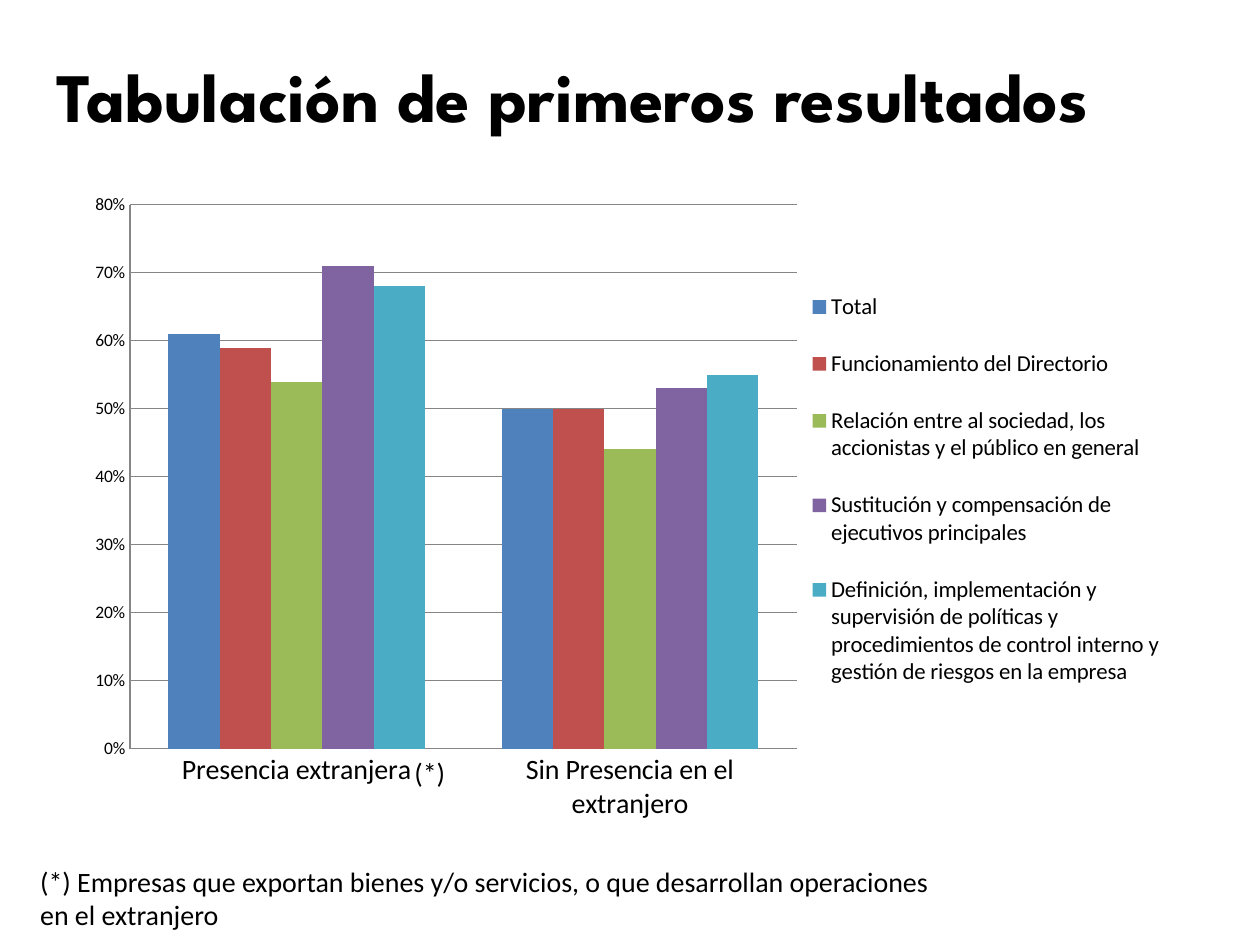
from lxml import etree
from pptx import Presentation
from pptx.chart.data import CategoryChartData
from pptx.dml.color import RGBColor
from pptx.enum import chart as ch, text
from pptx.oxml import ns
from pptx.util import Inches, Pt

BLACK = RGBColor(0x00, 0x00, 0x00)
GRAY = RGBColor(0x86, 0x86, 0x86)
BLUE = RGBColor(0x4F, 0x81, 0xBD)
RED = RGBColor(0xC0, 0x50, 0x4D)
GREEN = RGBColor(0x9B, 0xBB, 0x59)
PURPLE = RGBColor(0x80, 0x64, 0xA2)
TEAL = RGBColor(0x4B, 0xAC, 0xC6)

BODY_FONT = "Calibri"
TITLE_FONT = "League Spartan"

CATEGORIES = ["Presencia extranjera", "Sin Presencia en el extranjero"]
SERIES = [
    ("Total", (0.61, 0.50), BLUE),
    ("Funcionamiento del Directorio", (0.59, 0.50), RED),
    ("Relación entre al sociedad, los accionistas y el público en general",
     (0.54, 0.44), GREEN),
    ("Sustitución y compensación de ejecutivos principales",
     (0.71, 0.53), PURPLE),
    ("Definición, implementación y supervisión de políticas y procedimientos "
     "de control interno y gestión de riesgos en la empresa",
     (0.68, 0.55), TEAL),
]


def style(font, size, name=BODY_FONT, bold=False):
    font.name = name
    font.size = Pt(size)
    font.bold = bold
    font.color.rgb = BLACK


def set_title(slide, wording):
    title = slide.shapes.title
    title.left, title.top = Inches(0.35), Inches(0.13)
    title.width, title.height = Inches(9.5), Inches(1.25)
    frame = title.text_frame
    frame.text = wording
    frame.vertical_anchor = text.MSO_ANCHOR.MIDDLE
    frame.auto_size = text.MSO_AUTO_SIZE.NONE
    para = frame.paragraphs[0]
    para.alignment = text.PP_ALIGN.LEFT
    style(para.font, 39.6, TITLE_FONT, bold=True)


def add_note(slide, left, top, width, height, lines):
    box = slide.shapes.add_textbox(
        Inches(left), Inches(top), Inches(width), Inches(height))
    frame = box.text_frame
    frame.word_wrap = False
    frame.auto_size = text.MSO_AUTO_SIZE.SHAPE_TO_FIT_TEXT
    frame.text = "\n".join(lines)
    for para in frame.paragraphs:
        style(para.font, 16)


def place(part, x, y, w, h, inner=False):
    """Fix a plot area or legend at fractions of the chart's size."""
    for old in part.findall(ns.qn("c:layout")):
        part.remove(old)
    layout = etree.Element(ns.qn("c:layout"))
    manual = etree.SubElement(layout, ns.qn("c:manualLayout"))
    settings = [("layoutTarget", "inner")] if inner else []
    settings += [("xMode", "edge"), ("yMode", "edge"),
                 ("x", x), ("y", y), ("w", w), ("h", h)]
    for tag, value in settings:
        etree.SubElement(manual, ns.qn(f"c:{tag}")).set("val", str(value))
    position = part.find(ns.qn("c:legendPos"))
    if position is None:
        part.insert(0, layout)
    else:
        position.addnext(layout)


def style_line(line):
    line.color.rgb = GRAY
    line.width = Pt(0.75)


def format_axes(chart):
    category, value = chart.category_axis, chart.value_axis
    for axis, size in ((category, 16), (value, 10)):
        axis.major_tick_mark = axis.minor_tick_mark = ch.XL_TICK_MARK.NONE
        style(axis.tick_labels.font, size)
        style_line(axis.format.line)
    value.minimum_scale, value.maximum_scale, value.major_unit = 0, 0.8, 0.1
    value.has_major_gridlines = True
    style_line(value.major_gridlines.format.line)
    value.tick_labels.number_format = "0%"
    value.tick_labels.number_format_is_linked = False


def add_results_chart(slide):
    data = CategoryChartData(number_format="0%")
    data.categories = CATEGORIES
    for name, values, _ in SERIES:
        data.add_series(name, values)
    chart = slide.shapes.add_chart(
        ch.XL_CHART_TYPE.COLUMN_CLUSTERED, Inches(0.59), Inches(1.47),
        Inches(8.82), Inches(5.2), data).chart
    style(chart.font, 10)
    chart.has_title = False
    format_axes(chart)

    plot = chart.plots[0]
    plot.gap_width, plot.overlap = 150, 0
    plot.vary_by_categories = False
    for series, (_, _, color) in zip(plot.series, SERIES):
        series.format.fill.solid()
        series.format.fill.fore_color.rgb = color

    chart.has_legend = True
    legend = chart.legend
    legend.position = ch.XL_LEGEND_POSITION.RIGHT
    legend.include_in_layout = False
    style(legend.font, 13)
    plot_area = chart.element.find(f".//{ns.qn('c:plotArea')}")
    place(plot_area, 0.05, 0.03, 0.6, 0.83, inner=True)
    place(chart.element.find(f".//{ns.qn('c:legend')}"),
          0.65, 0.12, 0.34, 0.69)


def main():
    deck = Presentation()
    deck.slide_width, deck.slide_height = Inches(10), Inches(7.5)
    slide = deck.slides.add_slide(deck.slide_layouts[5])
    set_title(slide, "Tabulación de primeros resultados")
    add_results_chart(slide)
    add_note(slide, 0.22, 6.81, 7.35, 0.64, [
        "(*) Empresas que exportan bienes y/o servicios, "
        "o que desarrollan operaciones",
        "en el extranjero"])
    add_note(slide, 3.19, 5.95, 0.45, 0.37, ["(*)"])
    deck.save("out.pptx")


if __name__ == "__main__":
    main()
